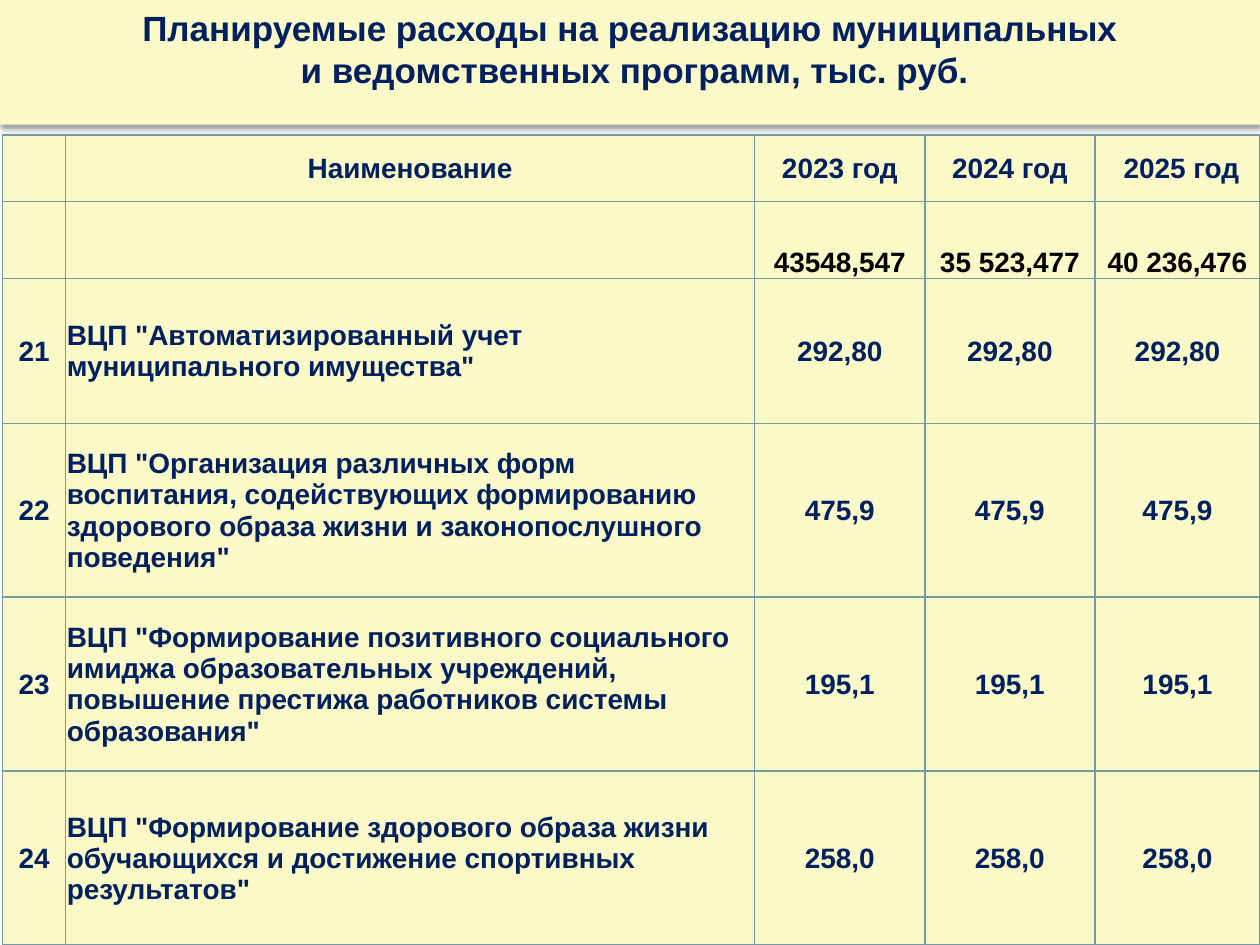
"""Builds the slide of planned spending on municipal programmes."""
from lxml import etree
from pptx import Presentation
from pptx.dml.color import RGBColor
from pptx.enum.shapes import MSO_SHAPE
from pptx.enum.text import MSO_ANCHOR, PP_ALIGN
from pptx.oxml import parse_xml
from pptx.util import Inches, Pt

RECT = MSO_SHAPE.RECTANGLE
LEFT, CENTER = PP_ALIGN.LEFT, PP_ALIGN.CENTER
TOP, MIDDLE, BOTTOM = MSO_ANCHOR.TOP, MSO_ANCHOR.MIDDLE, MSO_ANCHOR.BOTTOM
NS = 'xmlns:a="http://schemas.openxmlformats.org/drawingml/2006/main"'
HEX = {"cream": "FCF9C8", "navy": "002060", "black": "000000", "edge": "759AA5"}
COLS = [0.5, 5.47, 1.35, 1.35, 1.31]
ROWS = [0.53, 0.61, 1.15, 1.38, 1.38, 1.38]
PLANS = [
    ("21", 'ВЦП "Автоматизированный учет муниципального имущества"', "292,80"),
    ("22", 'ВЦП "Организация различных форм воспитания, содействующих формированию '
           'здорового образа жизни и законопослушного поведения"', "475,9"),
    ("23", 'ВЦП "Формирование позитивного социального имиджа образовательных учреждений, '
           'повышение престижа работников системы образования"', "195,1"),
    ("24", 'ВЦП "Формирование здорового образа жизни обучающихся и достижение '
           'спортивных результатов"', "258,0"),
]
DATA = [
    ["", "Наименование", "2023 год", "2024 год", " 2025 год"],
    ["", "", "43548,547", "35 523,477", "40 236,476"],
] + [[num, name] + [cost] * 3 for num, name, cost in PLANS]


def paint(item, name):
    item.fill.solid()
    item.fill.fore_color.rgb = RGBColor.from_string(HEX[name])


def style(frame, size, name, align):
    for para in frame.paragraphs:
        para.alignment = align
        for run in para.runs:
            run.font.name = "Arial"
            run.font.size = Pt(size)
            run.font.bold = True
            run.font.color.rgb = RGBColor.from_string(HEX[name])


deck = Presentation()
deck.slide_width, deck.slide_height = Inches(10), Inches(7.5)
slide = deck.slides.add_slide(deck.slide_layouts[6])

grid = slide.shapes.add_table(
    len(ROWS), len(COLS), Inches(0.02), Inches(1.07), Inches(sum(COLS)), Inches(sum(ROWS))
).table
grid.first_row = grid.horz_banding = False
for col, width in zip(grid.columns, COLS):
    col.width = Inches(width)
for row, height in zip(grid.rows, ROWS):
    row.height = Inches(height)

for r, line in enumerate(DATA):
    for c, text in enumerate(line):
        cell = grid.cell(r, c)
        cell.margin_left = cell.margin_right = cell.margin_top = Inches(0.01)
        cell.margin_bottom = 0
        cell.vertical_anchor = BOTTOM if r == 1 else MIDDLE
        props = cell._tc.get_or_add_tcPr()
        for side in "LRTB":
            props.append(parse_xml(
                f'<a:ln{side} {NS} w="{Pt(1)}"><a:solidFill><a:srgbClr val="{HEX["edge"]}"/>'
                f'</a:solidFill></a:ln{side}>'))
        paint(cell, "cream")
        if text:
            cell.text_frame.text = text
            style(cell.text_frame, 16, "black" if r == 1 else "navy",
                  LEFT if c == 1 and r > 1 else CENTER)

title = slide.shapes.add_shape(RECT, 0, 0, deck.slide_width, Inches(0.99))
paint(title, "cream")
title.line.fill.background()
title.shadow.inherit = False
glow = title._element.spPr.find("{*}effectLst")
glow.append(etree.fromstring(
    f'<a:outerShdw {NS} blurRad="{Pt(3.1)}" dist="{Pt(2)}" dir="5400000" rotWithShape="0">'
    f'<a:srgbClr val="{HEX["black"]}"><a:alpha val="38000"/></a:srgbClr></a:outerShdw>'))
frame = title.text_frame
frame.word_wrap = True
frame.vertical_anchor = TOP
frame.text = "Планируемые расходы на реализацию муниципальных\n и ведомственных программ, тыс. руб."
style(frame, 20, "navy", CENTER)

deck.save("out.pptx")
